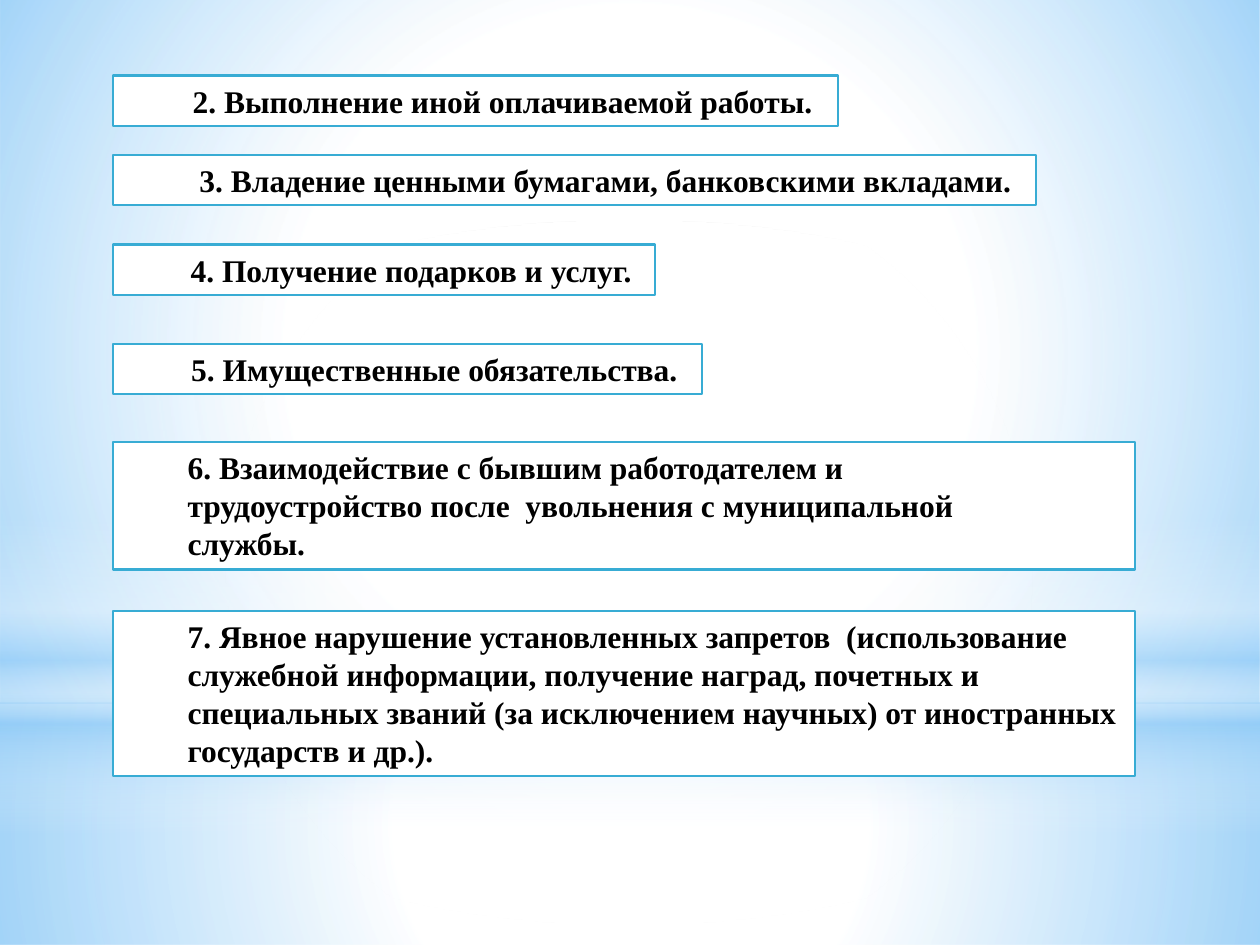
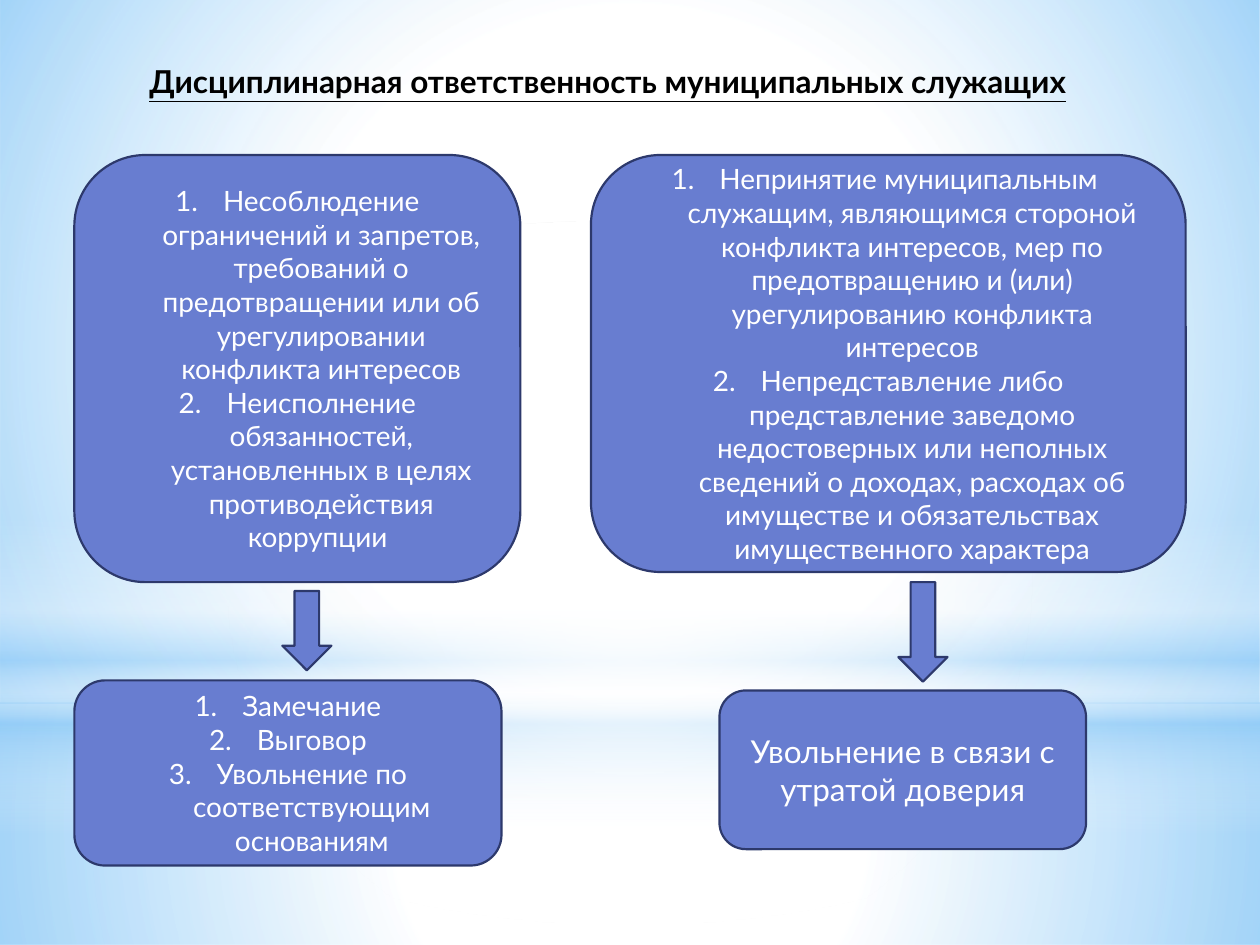
from lxml.etree import SubElement
from pptx import Presentation
from pptx.dml.color import RGBColor
from pptx.enum.shapes import MSO_SHAPE as Kind
from pptx.enum.text import MSO_ANCHOR as Anchor, MSO_AUTO_SIZE as Fit, PP_ALIGN as Align
from pptx.oxml import parse_xml
from pptx.oxml.ns import nsdecls, qn
from pptx.util import Inches, Pt

WHITE = RGBColor(0xFF, 0xFF, 0xFF)
BLACK = RGBColor(0, 0, 0)
SKY = RGBColor(0x8B, 0xC9, 0xF7)
CYAN = RGBColor(0x38, 0xAC, 0xD4)
BLUE = RGBColor(0x68, 0x7D, 0xD0)
NAVY = RGBColor(0x2D, 0x39, 0x6C)
SERIF, SANS = "Times New Roman", "Lato"

ROUND = ('<a:path path="circle"><a:fillToRect l="50000" t="50000" '
         'r="50000" b="50000"/></a:path>')
DOWN = '<a:lin ang="5400000" scaled="0"/>'
GLOW = [
    (Kind.RECTANGLE, 5.58, 1.92, ROUND,
     [(0, WHITE, 91), (37, WHITE, 76), (100, SKY, 79)]),
    (Kind.RECTANGLE, 0, 5.58, ROUND,
     [(0, WHITE, 89), (48, WHITE, 62), (100, SKY, 79)]),
    (Kind.RECTANGLE, 4.12, 2.5, DOWN,
     [(0, WHITE, 0), (29, WHITE, 30), (45, SKY, 40), (55, WHITE, 26),
      (65, SKY, 60), (100, WHITE, 0)]),
    (Kind.OVAL, 1.75, 5.58, ROUND, [(0, WHITE, 100), (56, WHITE, 0)]),
]

RISKS = [
    (0.6, 5.75, 0.4, ["2. Выполнение иной оплачиваемой работы. "]),
    (1.23, 7.32, 0.4, ["3. Владение ценными бумагами, банковскими вкладами."]),
    (1.94, 4.3, 0.4, ["4. Получение подарков и услуг. "]),
    (2.73, 4.67, 0.4, ["5. Имущественные обязательства. "]),
    (3.51, 8.11, 1.01, [
        "6. Взаимодействие с бывшим работодателем и",
        "трудоустройство после  увольнения с муниципальной",
        "службы."]),
    (4.85, 8.11, 1.31, [
        "7. Явное нарушение установленных запретов  (использование",
        "служебной информации, получение наград, почетных и",
        "специальных званий (за исключением научных) от иностранных",
        "государств и др.)."]),
]

TITLE = "Дисциплинарная ответственность муниципальных служащих"
CARDS = [
    ((0.59, 1.23, 3.54, 3.39), 16, [
        "Несоблюдение ограничений и запретов, требований о предотвращении "
        "или об урегулировании конфликта интересов",
        "Неисполнение обязанностей, установленных в целях "
        "противодействия коррупции "]),
    ((0.59, 5.4, 3.39, 1.47), 16, [
        "Замечание", "Выговор", "Увольнение по соответствующим основаниям"]),
    ((4.69, 1.23, 4.72, 3.31), 16, [
        "Непринятие муниципальным  служащим, являющимся стороной конфликта "
        "интересов, мер по предотвращению и (или) урегулированию "
        "конфликта интересов",
        "Непредставление либо представление заведомо недостоверных или "
        "неполных сведений о доходах, расходах об имуществе и "
        "обязательствах имущественного характера"]),
    ((5.71, 5.48, 2.91, 1.26), 18, ["Увольнение в связи с утратой доверия"]),
]
ARROWS = [(2.24, 4.69, 0.39, 0.63), (7.13, 4.62, 0.39, 0.79)]


def draw(slide, kind, box, fill=None, line=None):
    """Add a flat preset shape."""
    shape = slide.shapes.add_shape(kind, *map(Inches, box))
    shape.shadow.inherit = False
    if fill is None:
        shape.fill.background()
    else:
        shape.fill.solid()
        shape.fill.fore_color.rgb = fill
    if line is None:
        shape.line.fill.background()
    else:
        shape.line.color.rgb = line
        shape.line.width = Pt(1.25)
    return shape


def write(frame, texts, size, name, color, bold=False, align=Align.CENTER,
          left=0, first=0, number=False):
    """Fill a text frame with paragraphs of one style."""
    for i, text in enumerate(texts):
        para = frame.paragraphs[0] if i == 0 else frame.add_paragraph()
        para.text = text
        para.alignment = align
        props = para._p.get_or_add_pPr()
        props.set("marL", str(Inches(left)))
        props.set("indent", str(Inches(first)))
        if number:
            SubElement(props, qn("a:buFont"), typeface="+mj-lt")
            SubElement(props, qn("a:buAutoNum"), type="arabicPeriod")
        font = para.font
        font.size, font.name, font.bold = Pt(size), name, bold
        font.color.rgb = color


def blend(shape, stops, way):
    """Give a shape a gradient with transparent stops."""
    marks = "".join(
        f'<a:gs pos="{pos * 1000}"><a:srgbClr val="{color}">'
        f'<a:alpha val="{alpha * 1000}"/></a:srgbClr></a:gs>'
        for pos, color, alpha in stops)
    grad = parse_xml(f'<a:gradFill {nsdecls("a")} rotWithShape="1">'
                     f'<a:gsLst>{marks}</a:gsLst>{way}</a:gradFill>')
    props = shape.element.spPr
    props.replace(props.find(qn("a:noFill")), grad)


def dress(deck, slide):
    """Move the shared glow to the slide master."""
    tree = deck.slide_master.shapes.element
    for i, (kind, top, high, way, stops) in enumerate(GLOW):
        shape = draw(slide, kind, (0, top, 10, high))
        blend(shape, stops, way)
        shape.element.nvSpPr.cNvPr.set("id", str(50 + i))
        tree.insert(2 + i, shape.element)


def list_risks(slide):
    """Draw the framed list of conflict situations."""
    for top, wide, high, lines in RISKS:
        single = len(lines) == 1
        shape = draw(slide, Kind.RECTANGLE, (0.9, top, wide, high), WHITE, CYAN)
        frame = shape.text_frame
        frame.word_wrap = not single
        frame.auto_size = Fit.SHAPE_TO_FIT_TEXT
        frame.vertical_anchor = Anchor.TOP
        write(frame, lines, 18, SERIF, BLACK, True,
              Align.CENTER if single else Align.LEFT, first=0.49)


def show_duty(slide):
    """Draw the title, the offences and their penalties."""
    title = slide.shapes.title
    title.left, title.top, title.width, title.height = map(
        Inches, (0.53, 0.44, 8.59, 0.4))
    frame = title.text_frame
    frame.word_wrap = False
    frame.auto_size = Fit.SHAPE_TO_FIT_TEXT
    frame.vertical_anchor = Anchor.TOP
    write(frame, [TITLE], 18, SANS, BLACK, True)
    frame.paragraphs[0].font.underline = True
    for box, size, texts in CARDS:
        card = draw(slide, Kind.ROUNDED_RECTANGLE, box, BLUE, NAVY)
        card.text_frame.word_wrap = True
        card.text_frame.vertical_anchor = Anchor.MIDDLE
        many = len(texts) > 1
        step = 0.38 if many else 0
        write(card.text_frame, texts, size, SANS, WHITE,
              left=step, first=-step, number=many)
    for box in ARROWS:
        draw(slide, Kind.DOWN_ARROW, box, BLUE, NAVY)


def main():
    """Build the deck."""
    deck = Presentation()
    deck.slide_width, deck.slide_height = Inches(10), Inches(7.5)
    back = deck.slide_master.background.fill
    back.solid()
    back.fore_color.rgb = WHITE
    risks = deck.slides.add_slide(deck.slide_layouts[6])
    dress(deck, risks)
    list_risks(risks)
    show_duty(deck.slides.add_slide(deck.slide_layouts[5]))
    deck.save("out.pptx")


if __name__ == "__main__":
    main()
